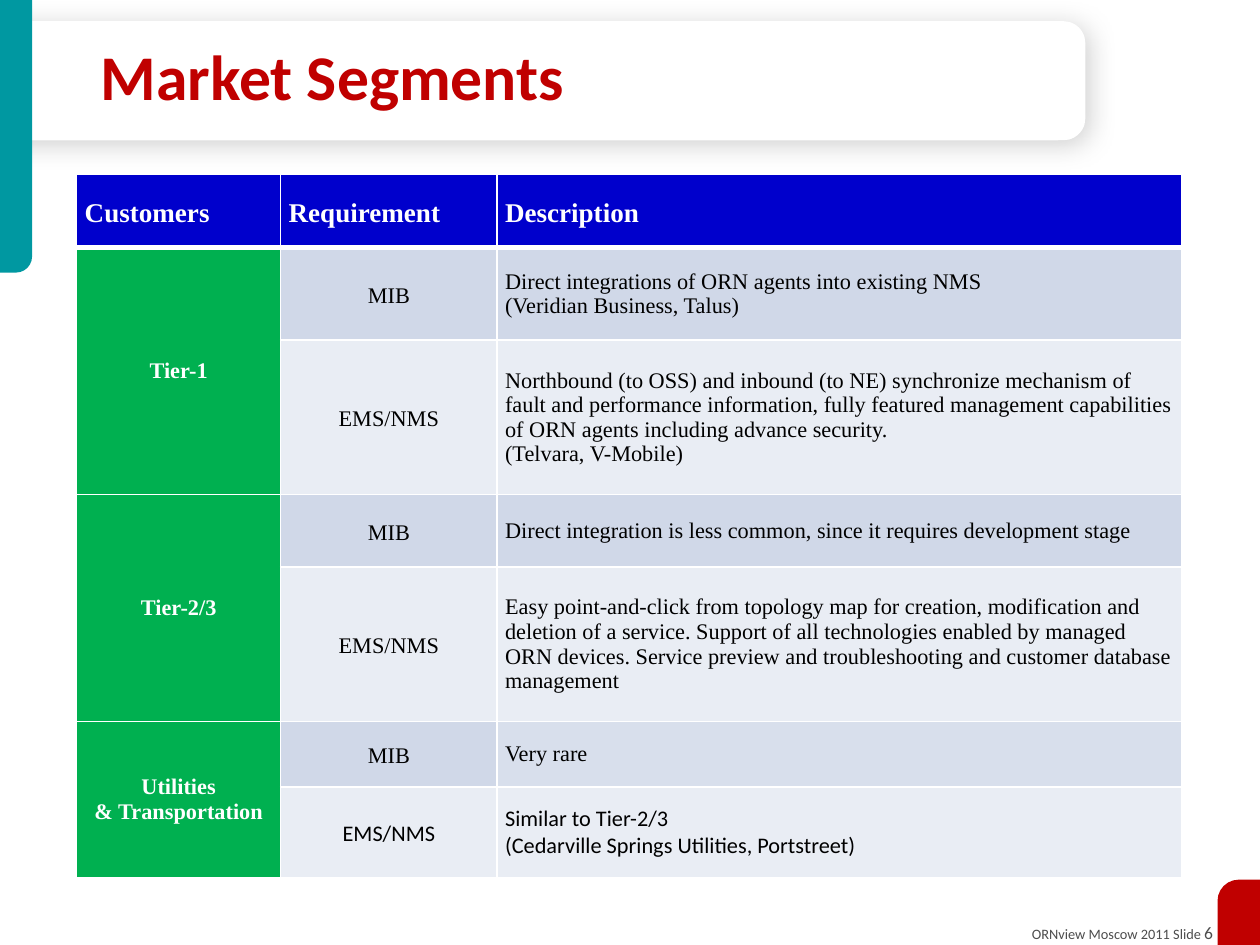
from lxml.etree import SubElement
from pptx import Presentation
from pptx.dml.color import RGBColor
from pptx.enum.shapes import MSO_SHAPE as Preset
from pptx.enum.text import MSO_ANCHOR as Anchor, MSO_AUTO_SIZE as AutoSize, PP_ALIGN as Align
from pptx.oxml import parse_xml
from pptx.oxml.ns import nsdecls, qn
from pptx.util import Inches, Pt

WHITE = RGBColor(0xFF, 0xFF, 0xFF)
BLACK = RGBColor(0, 0, 0)
GREY = RGBColor(0x4D, 0x4D, 0x4D)
RED = RGBColor(0xC0, 0, 0)
TEAL = RGBColor(0, 0x98, 0xA1)
BLUE = RGBColor(0, 0, 0xCC)
GREEN = RGBColor(0, 0xB0, 0x50)
BAND_DARK = RGBColor(0xD0, 0xD8, 0xE8)
BAND_LIGHT = RGBColor(0xE9, 0xED, 0xF4)

SANS, SERIF = "Calibri", "Times New Roman"

COLUMN_WIDTHS = [1.78, 1.89, 5.98]
ROW_HEIGHTS = [0.64, 0.81, 1.35, 0.63, 1.35, 0.57, 0.79]
HEADINGS = ["Customers", "Requirement", "Description"]
# Each segment: customer lines, then description lines for MIB and for EMS/NMS
SEGMENTS = [
    (["Tier-1"],
     ["Direct integrations of ORN agents into existing NMS",
      "(Veridian Business, Talus)"],
     ["Northbound (to OSS) and inbound (to NE) synchronize mechanism of fault and "
      "performance information, fully featured management capabilities of ORN agents "
      "including advance security.",
      "(Telvara, V-Mobile)"]),
    (["Tier-2/3"],
     ["Direct integration is less common, since it requires development stage"],
     ["Easy point-and-click from topology map for creation, modification and deletion "
      "of a service. Support of all technologies enabled by managed ORN devices. Service "
      "preview and troubleshooting and customer database management"]),
    (["Utilities", "& Transportation"],
     ["Very rare"],
     ["Similar to Tier-2/3", "(Cedarville Springs Utilities, Portstreet)"]),
]


class SlideBuilder:
    def __init__(self, slide):
        self.slide = slide

    def add_text(self, paragraph, text, size, color, font=SERIF, bold=False):
        run = paragraph.add_run()
        run.text = text
        run.font.name, run.font.size, run.font.bold = font, Pt(size), bold
        run.font.color.rgb = color

    def panel(self, preset, box, color, adjustments):
        shape = self.slide.shapes.add_shape(preset, *map(Inches, box))
        shape.shadow.inherit = False
        shape.fill.solid()
        shape.fill.fore_color.rgb = color
        shape.line.fill.background()
        for index, value in enumerate(adjustments):
            shape.adjustments[index] = value
        return shape

    def flip(self, shape, axis):
        shape._element.spPr.find(qn("a:xfrm")).set(axis, "1")

    def soft_shadow(self, shape):
        effects = shape._element.spPr.find(qn("a:effectLst"))
        effects.append(parse_xml(
            f'<a:outerShdw {nsdecls("a")} blurRad="{Pt(17)}" dist="{Pt(3)}" dir="2700000" '
            'algn="tl" rotWithShape="0"><a:srgbClr val="000000"><a:alpha val="19000"/>'
            '</a:srgbClr></a:outerShdw>'))

    def text_box(self, box, margin_y, wrap):
        """Add an empty text box and return its frame."""
        frame = self.slide.shapes.add_textbox(*map(Inches, box)).text_frame
        frame.word_wrap = wrap
        frame.margin_left = frame.margin_right = Inches(0.11)
        frame.margin_top = frame.margin_bottom = Inches(margin_y)
        return frame

    def table(self, left, top, widths, heights):
        box = map(Inches, (left, top, sum(widths), sum(heights)))
        table = self.slide.shapes.add_table(len(heights), len(widths), *box).table
        table.first_row = table.horz_banding = False
        for column, width in zip(table.columns, widths):
            column.width = Inches(width)
        for row, height in zip(table.rows, heights):
            row.height = Inches(height)
        return table

    def cell(self, cell, lines, fill, size=14, color=BLACK, font=SERIF, bold=False,
             align=Align.LEFT, spaced=False, margin_y=0.08):
        cell.vertical_anchor = Anchor.MIDDLE
        cell.margin_left = cell.margin_right = Inches(0.07)
        cell.margin_top = cell.margin_bottom = Inches(margin_y)
        cell.fill.solid()
        cell.fill.fore_color.rgb = fill
        frame = cell.text_frame
        for index, line in enumerate(lines):
            paragraph = frame.add_paragraph() if index else frame.paragraphs[0]
            paragraph.alignment = align
            if spaced:
                paragraph.line_spacing, paragraph.space_after = 1.15, Pt(10)
            self.add_text(paragraph, line, size, color, font, bold)

    def borders(self, cell, top=1, bottom=1):
        properties = cell._tc.get_or_add_tcPr()
        sides = {"lnL": 1, "lnR": 1, "lnT": top, "lnB": bottom}
        for index, (side, width) in enumerate(sides.items()):
            properties.insert(index, parse_xml(
                f'<a:{side} {nsdecls("a")} w="{Pt(width)}"><a:solidFill>'
                f'<a:srgbClr val="{WHITE}"/></a:solidFill></a:{side}>'))

    def transparency(self, cell, opacity):
        color = cell._tc.tcPr.find(qn("a:solidFill")).find(qn("a:srgbClr"))
        SubElement(color, qn("a:alpha")).set("val", str(opacity * 1000))


def add_frame(builder):
    footer = builder.text_box((8.79, 8, 1.91, 0.3), 0.05, wrap=False)
    footer.auto_size = AutoSize.SHAPE_TO_FIT_TEXT
    footer_line = footer.paragraphs[0]
    footer_line.alignment = Align.RIGHT
    builder.add_text(footer_line, "ORNview Moscow 2011 Slide ", 9, GREY, SANS)
    builder.add_text(footer_line, "6", 11, GREY, SANS)

    banner = builder.panel(Preset.ROUND_2_SAME_RECTANGLE, (4.22, -4.03, 1.04, 9.47),
                           WHITE, [0.184, 0])
    banner.rotation = 90
    builder.soft_shadow(banner)
    side_tab = builder.panel(Preset.ROUND_1_RECTANGLE, (0, 0, 0.28, 2.38), TEAL, [0.5])
    builder.flip(side_tab, "flipV")
    corner_tab = builder.panel(Preset.ROUND_1_RECTANGLE, (10.63, 7.68, 0.37, 0.57), RED, [0.5])
    builder.flip(corner_tab, "flipH")

    title = builder.text_box((0.77, 0.32, 8.14, 0.78), 0.06, wrap=True)
    title.vertical_anchor = Anchor.MIDDLE
    title.paragraphs[0].line_spacing = 0.85
    builder.add_text(title.paragraphs[0], "Market Segments", 40, RED, SANS, bold=True)


def add_segments(builder):
    table = builder.table(0.67, 1.52, COLUMN_WIDTHS, ROW_HEIGHTS)
    for column, heading in enumerate(HEADINGS):
        builder.cell(table.cell(0, column), [heading], BLUE, 17, WHITE, bold=True,
                     spaced=True, margin_y=0)

    last_row = len(ROW_HEIGHTS) - 1
    for index, (customer, mib, ems) in enumerate(SEGMENTS):
        first = 1 + 2 * index
        table.cell(first, 0).merge(table.cell(first + 1, 0))
        builder.cell(table.cell(first, 0), customer, GREEN, color=WHITE, bold=True,
                     align=Align.CENTER)
        bands = [("MIB", mib, BAND_DARK), ("EMS/NMS", ems, BAND_LIGHT)]
        for row, (requirement, description, fill) in enumerate(bands, first):
            style = {"font": SANS, "margin_y": 0} if row == last_row else {}
            builder.cell(table.cell(row, 1), [requirement], fill, align=Align.CENTER,
                         spaced=True, **style)
            builder.cell(table.cell(row, 2), description, fill, **style)
    builder.transparency(table.cell(last_row - 1, 2), 82)

    for row in range(len(ROW_HEIGHTS)):
        for column in range(len(COLUMN_WIDTHS)):
            builder.borders(table.cell(row, column), top=3 if row == 1 else 1,
                            bottom=3 if row == 0 else 1)


def main():
    deck = Presentation()
    deck.slide_width, deck.slide_height = Inches(11), Inches(8.25)
    builder = SlideBuilder(deck.slides.add_slide(deck.slide_layouts[6]))
    add_frame(builder)
    add_segments(builder)
    deck.save("out.pptx")


if __name__ == "__main__":
    main()
